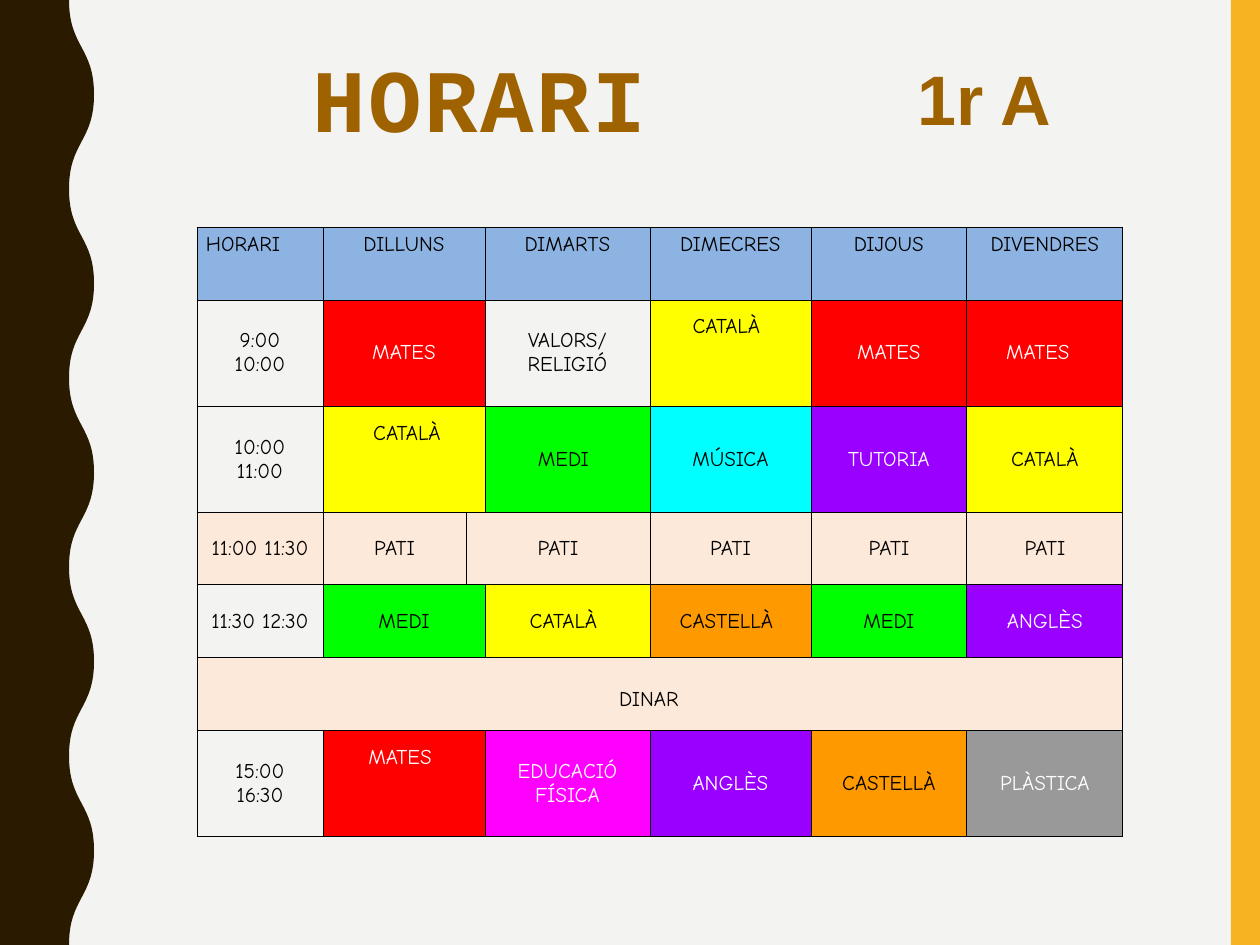
from lxml import etree
from pptx import Presentation
from pptx import util as u
from pptx.dml import color
from pptx.enum import shapes, text
from pptx.oxml import ns

PX = 914400 / 126
COLORS = {
    "paper": "F3F3F2", "gold": "F8B323", "brown": "2A1A00", "title": "9F6200",
    "black": "000000", "white": "FFFFFF", "blue": "8DB3E2", "peach": "FDE9D9",
    "red": "FF0000", "yellow": "FFFF00", "green": "00FF00", "cyan": "00FFFF",
    "purple": "9900FF", "orange": "FF9900", "magenta": "FF00FF", "grey": "999999",
}
DARK_FILLS = {"red", "purple", "magenta", "grey"}
COLUMNS = [126, 143, 19, 165, 161, 156, 156]
ROWS = [73, 106, 107, 72, 73, 73, 106]
SLOTS = [(0, 0), (1, 2), (3, 3), (4, 4), (5, 5), (6, 6)]
BREAK_SLOTS = [(0, 0), (1, 1), (2, 3), (4, 4), (5, 5), (6, 6)]
HIGH = {"top": 15}
DAYS = ["DILLUNS", "DIMARTS", "DIMECRES", "DIJOUS", "DIVENDRES"]
TIMETABLE = [
    [("HORARI", "blue", {"top": 6, "align": "LEFT"})]
    + [(day, "blue", {"top": 6}) for day in DAYS],
    [("9:00\n10:00", None), ("MATES", "red"), ("VALORS/\nRELIGIÓ", None),
     ("CATALÀ", "yellow", {"shift": -4, **HIGH}), ("MATES", "red"),
     ("MATES", "red", {"shift": -7})],
    [("10:00\n11:00", None), ("CATALÀ", "yellow", {"shift": 3, "top": 16}),
     ("MEDI", "green", {"shift": -4}), ("MÚSICA", "cyan"),
     ("TUTORIA", "purple"), ("CATALÀ", "yellow")],
    [("11:00 11:30", "peach")] + [("PATI", "peach")] * len(DAYS),
    [("11:30 12:30", None), ("MEDI", "green"), ("CATALÀ", "yellow", {"shift": -4}),
     ("CASTELLÀ", "orange", {"shift": -4}), ("MEDI", "green"), ("ANGLÈS", "purple")],
    [("DINAR", "peach", {"top": 30, "shift": -11})],
    [("15:00\n16:30", None), ("MATES", "red", {"shift": -4, **HIGH}),
     ("EDUCACIÓ FÍSICA", "magenta"), ("ANGLÈS", "purple"),
     ("CASTELLÀ", "orange"), ("PLÀSTICA", "grey")],
]


def px(n):
    return u.Emu(round(n * PX))


def rgb(name):
    return color.RGBColor.from_string(COLORS[name])


def write(tf, words, font="Comic Neue", size=12, fill="black", bold=False,
          align="CENTER", line=1.0, spacing=0):
    for i, words_line in enumerate(words.split("\n")):
        p = tf.add_paragraph() if i else tf.paragraphs[0]
        p.alignment = getattr(text.PP_ALIGN, align)
        p.line_spacing = line
        p.space_before = u.Pt(0)
        r = p.add_run()
        r.text = words_line
        r.font.name, r.font.size, r.font.bold = font, u.Pt(size), bold
        r.font.color.rgb = rgb(fill)
        if spacing:
            r.font._element.set("spc", str(spacing))


class Deck:
    def __init__(self, prs):
        self.s = prs.slides.add_slide(prs.slide_layouts[5])
        self.s.background.fill.solid()
        self.s.background.fill.fore_color.rgb = rgb("paper")

    def paint(self, sp, fill):
        sp.shadow.inherit = False
        sp.fill.solid()
        sp.fill.fore_color.rgb = rgb(fill)
        sp.line.fill.background()

    def bar(self, x, y, w, h, fill):
        sp = self.s.shapes.add_shape(shapes.MSO_SHAPE.RECTANGLE, px(x), px(y), px(w), px(h))
        self.paint(sp, fill)

    def wavy_edge(self, inner, outer, height, waves, fill):
        points = [(px(outer if k % 2 else inner), px(height * k / waves))
                  for k in range(waves + 1)]
        builder = self.s.shapes.build_freeform(*points[0], scale=1.0)
        builder.add_line_segments(points[1:] + [(0, px(height)), (0, 0)], close=True)
        sp = builder.convert_to_shape()
        lines = list(sp._element.iter(ns.qn("a:lnTo")))[:waves]
        for line, start, end in zip(lines, points, points[1:]):
            middle = (start[1] + end[1]) // 2
            curve = etree.Element(ns.qn("a:cubicBezTo"))
            for x, y in ((start[0], middle), (end[0], middle), end):
                etree.SubElement(curve, ns.qn("a:pt"), x=str(x), y=str(y))
            line.getparent().replace(line, curve)
        self.paint(sp, fill)

    def title(self, x, y, w, h, words, **style):
        sp = self.s.shapes.title
        sp.left, sp.top, sp.width, sp.height = px(x), px(y), px(w), px(h)
        tf = sp.text_frame
        tf.auto_size = text.MSO_AUTO_SIZE.NONE
        tf.vertical_anchor = text.MSO_ANCHOR.MIDDLE
        tf.margin_right, tf.margin_bottom = px(127), px(23)
        write(tf, words, **style)

    def label(self, x, y, w, h, words, **style):
        tf = self.s.shapes.add_textbox(px(x), px(y), px(w), px(h)).text_frame
        tf.word_wrap = True
        write(tf, words, **style)

    def border(self, cell):
        tc_pr = cell._tc.get_or_add_tcPr()
        for side in ("lnL", "lnR", "lnT", "lnB"):
            ln = etree.SubElement(tc_pr, ns.qn("a:" + side), w=str(u.Pt(0.5)))
            solid = etree.SubElement(ln, ns.qn("a:solidFill"))
            etree.SubElement(solid, ns.qn("a:srgbClr"), val=COLORS["black"])

    def fill_cell(self, cell, words, fill, top=None, shift=0, align="CENTER"):
        cell.margin_left = px(9 + 2 * max(shift, 0))
        cell.margin_right = px(9 + 2 * max(-shift, 0))
        cell.margin_top, cell.margin_bottom = px(top or 6), px(6)
        cell.vertical_anchor = text.MSO_ANCHOR.TOP if top else text.MSO_ANCHOR.MIDDLE
        if fill:
            cell.fill.solid()
            cell.fill.fore_color.rgb = rgb(fill)
        ink = "white" if fill in DARK_FILLS else "black"
        write(cell.text_frame, words, fill=ink, align=align)

    def timetable(self, x, y):
        frame = self.s.shapes.add_table(len(ROWS), len(COLUMNS), px(x), px(y),
                                        px(sum(COLUMNS)), px(sum(ROWS)))
        table = frame.table
        table.first_row = table.horz_banding = False
        for column, width in zip(table.columns, COLUMNS):
            column.width = px(width)
        for row, height in zip(table.rows, ROWS):
            row.height = px(height)
        for cell in table.iter_cells():
            self.border(cell)
            cell.fill.background()
        for i, entries in enumerate(TIMETABLE):
            slots = BREAK_SLOTS if entries[-1][0] == "PATI" else SLOTS
            if len(entries) == 1:
                slots = [(0, len(COLUMNS) - 1)]
            for (first, last), (words, fill, *options) in zip(slots, entries):
                cell = table.cell(i, first)
                if last > first:
                    cell.merge(table.cell(i, last))
                self.fill_cell(cell, words, fill, **(options[0] if options else {}))


def main():
    prs = Presentation()
    prs.slide_width, prs.slide_height = px(1260), px(945)
    deck = Deck(prs)
    deck.bar(1231, 0, 29, 945, "gold")
    deck.wavy_edge(69, 94, 945, 10, "brown")
    deck.title(227, 49, 619, 125, "HORARI", font="Courier New", size=51,
               fill="title", bold=True, line=0.9, spacing=150)
    deck.timetable(197, 227)
    deck.label(905, 49, 217, 97, "1r A", font="Arial", size=40,
               fill="title", bold=True, align="LEFT")
    prs.save("out.pptx")


if __name__ == "__main__":
    main()
